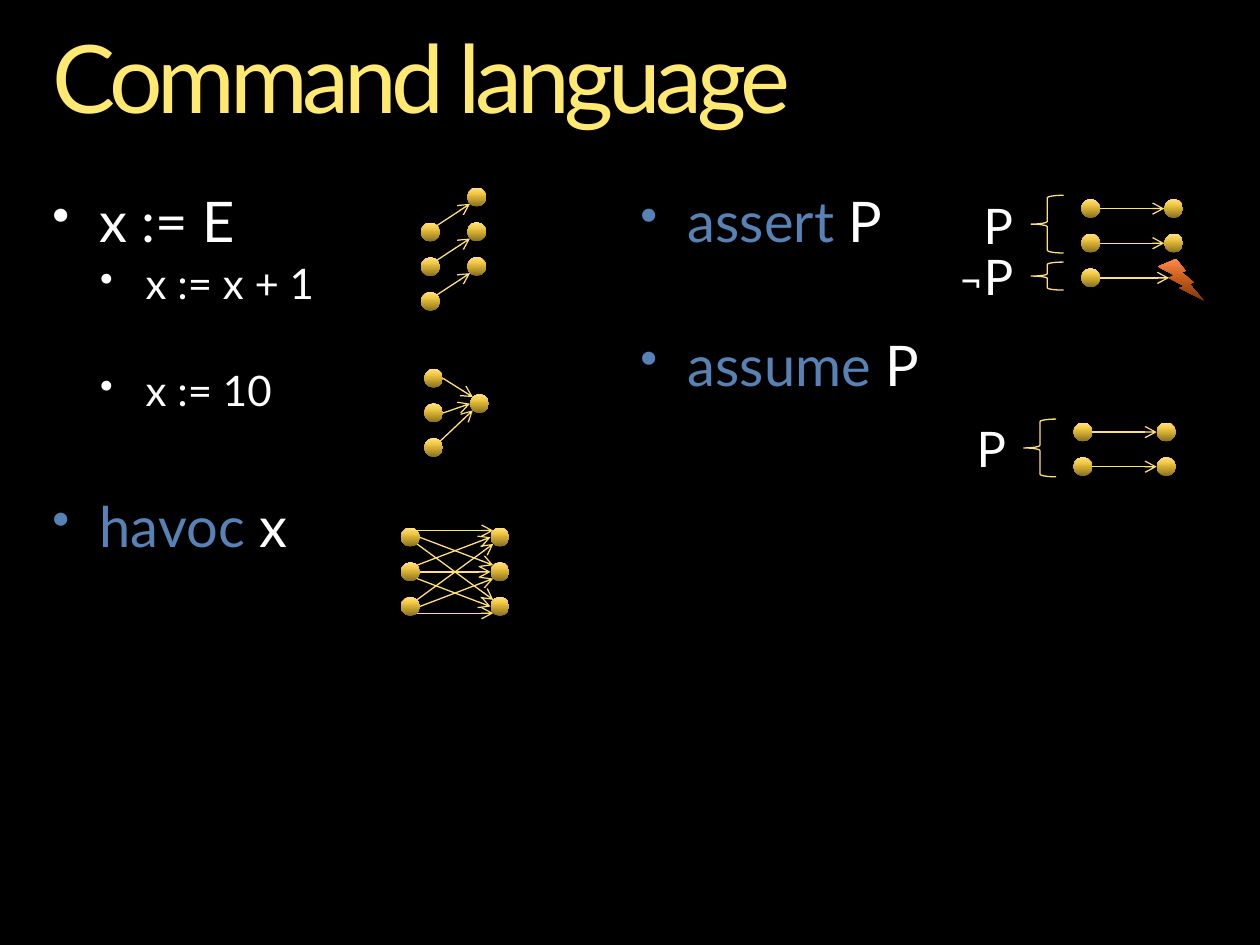
from dataclasses import dataclass
from typing import Any, NamedTuple

import lxml.etree
import pptx
import pptx.dml.color
import pptx.enum.shapes
import pptx.enum.text
import pptx.oxml
import pptx.oxml.ns
import pptx.util

Pt = pptx.util.Pt
RGB = pptx.dml.color.RGBColor.from_string
SHAPE = pptx.enum.shapes.MSO_SHAPE
ALIGN = pptx.enum.text.PP_ALIGN
FIT = pptx.enum.text.MSO_AUTO_SIZE
qn = pptx.oxml.ns.qn


@dataclass(frozen=True)
class Theme:
    font: str = "Lato"
    symbol_font: str = "Karla"
    background: str = "000000"
    text: str = "FFFFFF"
    title: str = "FFE971"
    keyword: str = "5782B5"
    line: str = "FFDF79"
    gold: tuple = ((0, "876E1E"), (50, "D5AF34"), (70, "F1C948"), (100, "FFE183"))
    orange: tuple = ((0, "7C370C"), (50, "C35918"), (70, "DB6C2A"), (100, "FF8A4A"))
    title_size: float = 54
    command_size: float = 32
    example_size: float = 24
    label_size: float = 28
    line_width: float = 0.75


THEME = Theme()
DOT = 10.8
PITCH = 19.8
UPPER, MIDDLE, LOWER = range(3)
SITE_Y = (1.6, 5.4, 9.2)
SITE_INSET = (1.6, 0, 1.6)


class Run(NamedTuple):
    text: str
    color: str = THEME.text
    font: str = THEME.font


class Item(NamedTuple):
    runs: tuple[Run, ...]
    size: float = THEME.command_size
    margin: float = 27
    hanging: float = 27
    before: float = 0


class Box(NamedTuple):
    left: float
    top: float
    width: float
    height: float


class Column(NamedTuple):
    left: float
    top: float
    count: int


class Link(NamedTuple):
    start: int
    start_site: int
    end: int
    end_site: int


class Relation(NamedTuple):
    before: Column
    after: Column
    links: tuple[Link, ...]


class Label(NamedTuple):
    box: Box
    runs: tuple[Run, ...]


def apply(target: Any, values: dict[str, Any]) -> None:
    for name, value in values.items():
        setattr(target, name, value)


def lengths(*values: float) -> list[int]:
    return [Pt(v) for v in values]


def add_runs(p: Any, runs: tuple[Run, ...], size: float) -> None:
    for run in runs:
        r = p.add_run()
        r.text = run.text
        apply(r.font, {"name": run.font, "size": Pt(size)})
        r.font.color.rgb = RGB(run.color)


def add_title(s: Any, text: str) -> None:
    sp = s.shapes.title
    apply(sp, dict(zip(("left", "top", "width", "height"), lengths(30, 18, 660, 59))))
    tf = sp.text_frame
    apply(tf, {"margin_left": 0, "margin_top": 0, "margin_right": 0, "margin_bottom": 0,
               "word_wrap": True, "auto_size": FIT.NONE,
               "vertical_anchor": pptx.enum.text.MSO_ANCHOR.TOP})
    p = tf.paragraphs[0]
    apply(p, {"alignment": ALIGN.LEFT, "line_spacing": 0.9})
    add_runs(p, (Run(text, THEME.title),), THEME.title_size)
    p.runs[0].font._element.set("spc", "-300")


def add_list(s: Any, box: Box, items: tuple[Item, ...]) -> None:
    tf = s.shapes.add_textbox(*lengths(*box)).text_frame
    apply(tf, {"margin_left": 0, "margin_top": 0, "margin_right": 0, "margin_bottom": 0,
               "word_wrap": True})
    for i, item in enumerate(items):
        p = tf.add_paragraph() if i else tf.paragraphs[0]
        apply(p, {"line_spacing": 0.9, "space_before": Pt(item.before)})
        pPr = p._p.get_or_add_pPr()
        pPr.set("marL", str(Pt(item.margin)))
        pPr.set("indent", str(-Pt(item.hanging)))
        lxml.etree.SubElement(pPr, qn("a:buSzPct"), val="90000")
        lxml.etree.SubElement(pPr, qn("a:buChar"), char="•")
        add_runs(p, item.runs, item.size)


def add_solid(s: Any, kind: Any, box: Box, stops: tuple) -> None:
    sp = s.shapes.add_shape(kind, *lengths(*box))
    sp.shadow.inherit = False
    sp.line.fill.background()
    sp.fill.gradient()
    sp.fill.gradient_angle = 90
    gs_list = sp._element.spPr.find(".//" + qn("a:gsLst"))
    for gs in list(gs_list):
        gs_list.remove(gs)
    for position, color in stops:
        gs = lxml.etree.SubElement(gs_list, qn("a:gs"), pos=str(position * 1000))
        lxml.etree.SubElement(gs, qn("a:srgbClr"), val=color)


def add_arrow(s: Any, x1: float, y1: float, x2: float, y2: float) -> None:
    straight = pptx.enum.shapes.MSO_CONNECTOR.STRAIGHT
    c = s.shapes.add_connector(straight, *lengths(x1, y1, x2, y2))
    c.line.color.rgb = RGB(THEME.line)
    c.line.width = Pt(THEME.line_width)
    lxml.etree.SubElement(c.line._get_or_add_ln(), qn("a:tailEnd"), type="arrow")
    lxml.etree.SubElement(c._element.spPr, qn("a:effectLst"))


def add_relation(s: Any, relation: Relation) -> None:
    before, after, links = relation
    for column in (before, after):
        for row in range(column.count):
            box = Box(column.left, column.top + row * PITCH, DOT, DOT)
            add_solid(s, SHAPE.OVAL, box, THEME.gold)
    for link in links:
        add_arrow(s, before.left + DOT - SITE_INSET[link.start_site],
                  before.top + link.start * PITCH + SITE_Y[link.start_site],
                  after.left + SITE_INSET[link.end_site],
                  after.top + link.end * PITCH + SITE_Y[link.end_site])


def add_brace(s: Any, box: Box) -> None:
    sp = s.shapes.add_shape(SHAPE.LEFT_BRACE, *lengths(*box))
    sp.shadow.inherit = False
    sp.fill.background()
    sp.line.color.rgb = RGB(THEME.line)
    sp.line.width = Pt(THEME.line_width)


def add_label(s: Any, label: Label) -> None:
    tf = s.shapes.add_textbox(*lengths(*label.box)).text_frame
    tf.word_wrap = True
    p = tf.paragraphs[0]
    p.alignment = ALIGN.RIGHT
    add_runs(p, label.runs, THEME.label_size)


def parallel(count: int, start_site: int, end_site: int) -> tuple[Link, ...]:
    return tuple(Link(i, start_site, i, end_site) for i in range(count))


def example(text: str, before: float) -> Item:
    return Item((Run(text),), THEME.example_size, 53.3, 26, before)


def command(keyword: str, operand: str, before: float = 0) -> Item:
    return Item((Run(keyword, THEME.keyword), Run(operand)), before=before)


STATEMENTS = (Item((Run("x := E"),)), example("x := x + 1", 4.8),
              example("x := 10", 35.5), command("havoc", " x", 47.4))
CONDITIONS = (command("assert", " P"), command("assume", " P", 47.4))
RELATIONS = (
    Relation(Column(240.5, 127.3, 3), Column(267, 107.3, 3), parallel(3, UPPER, LOWER)),
    Relation(Column(242.4, 210.8, 3), Column(268.6, 225.3, 1),
             (Link(0, MIDDLE, 0, UPPER), Link(1, MIDDLE, 0, MIDDLE), Link(2, UPPER, 0, LOWER))),
    Relation(Column(229, 301.6, 3), Column(280.3, 301.6, 3),
             tuple(Link(i, j, j, i) for i in range(3) for j in range(3))),
    Relation(Column(617.8, 113.8, 3), Column(665.3, 113.8, 2), parallel(2, MIDDLE, MIDDLE)),
    Relation(Column(613.4, 241.5, 2), Column(661, 241.5, 2), parallel(2, MIDDLE, MIDDLE)),
)
BRACES = (Box(589.2, 111.6, 18.5, 33), Box(589.2, 149.8, 18.5, 16), Box(585, 239.5, 18.5, 33))
LABELS = (
    Label(Box(534, 108, 52, 41), (Run("P"),)),
    Label(Box(507, 137.5, 79, 41), (Run("¬", font=THEME.symbol_font), Run("P"))),
    Label(Box(530, 235.4, 52, 41), (Run("P"),)),
)


def main() -> None:
    prs = pptx.Presentation()
    prs.slide_width, prs.slide_height = lengths(720, 540)
    s = prs.slides.add_slide(prs.slide_layouts[5])
    s.background.fill.solid()
    s.background.fill.fore_color.rgb = RGB(THEME.background)
    add_title(s, "Command language")
    add_list(s, Box(30, 111, 324, 302), STATEMENTS)
    add_list(s, Box(366, 111, 324, 291), CONDITIONS)
    for relation in RELATIONS:
        add_relation(s, relation)
    add_solid(s, SHAPE.LIGHTNING_BOLT, Box(661.7, 148, 26.6, 24), THEME.orange)
    add_arrow(s, 628.6, 158.8, 668, 158.8)
    for brace in BRACES:
        add_brace(s, brace)
    for label in LABELS:
        add_label(s, label)
    prs.save("out.pptx")


if __name__ == "__main__":
    main()
